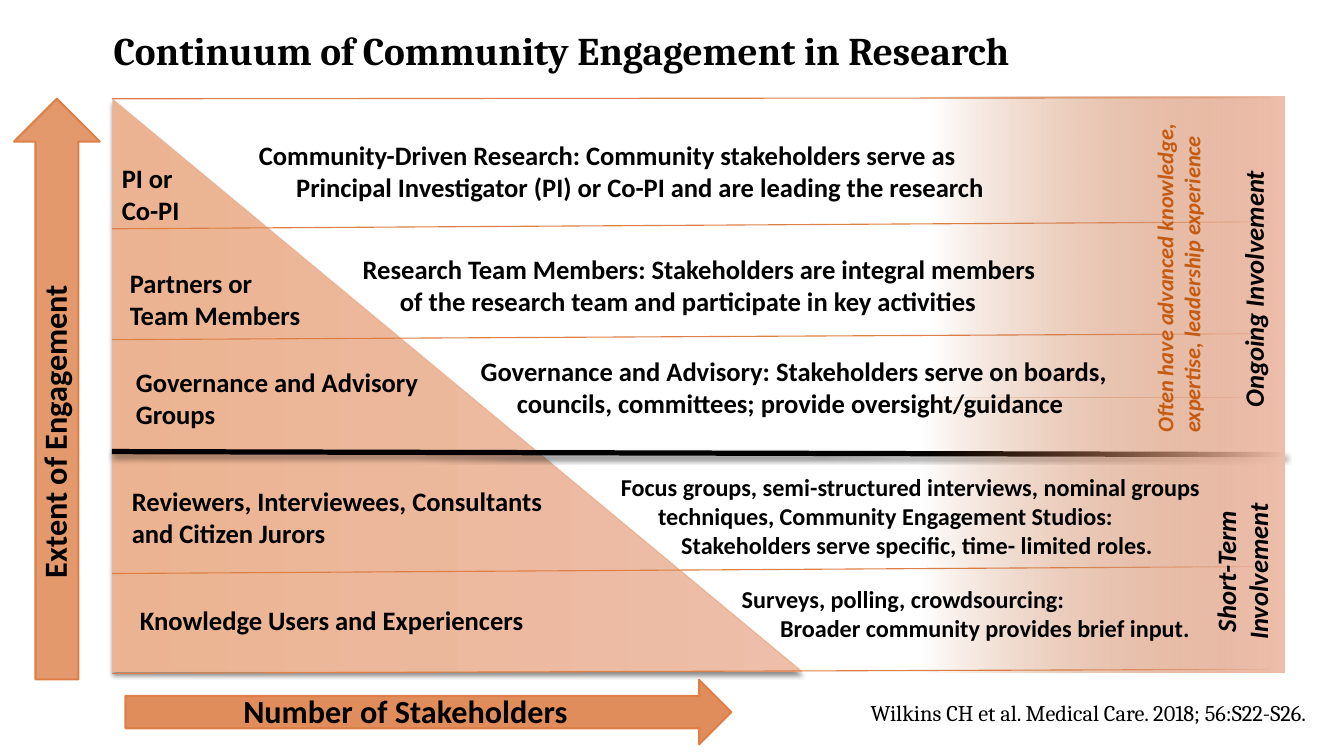
from dataclasses import dataclass

from lxml.etree import SubElement
from pptx import Presentation
from pptx.dml.color import RGBColor as RGB
from pptx.enum.shapes import MSO_CONNECTOR as CONN, MSO_SHAPE as SHAPE
from pptx.enum.text import MSO_AUTO_SIZE as AUTO, PP_ALIGN as ALIGN
from pptx.oxml.ns import qn
from pptx.util import Inches, Pt


@dataclass(frozen=True)
class Theme:
    body: str = "Calibri"
    heading: str = "Cambria"
    ink: str = "000000"
    accent: str = "DD8047"
    note: str = "C55A11"
    peach: str = "EBB391"
    blush: str = "EEBEAA"
    fade: str = "B95B22"
    title_size: float = 28
    axis_size: float = 23
    text_size: float = 19
    detail_size: float = 17.3
    small_size: float = 16
    hairline: float = 0.79
    outline: float = 1.5
    divider: float = 3.75


T = Theme()
COLS, ROWS = 133.33, 75  # square grid over the slide
LEFT, RIGHT = 11.1, 126  # ends of the row rules

# Row rules: height at the left end, height at the right end
RULES = [(9.8, 9.7), (33.7, 33.1), (22.7, 22), (56.9, 56.2), (66.8, 66.4)]

# Roles in the triangle: text, box
ROLES = [
    ("PI or\nCo-PI", (11.1, 15.6, 19.1, 7.4)),
    ("Partners or\nTeam Members", (11.9, 26, 27.1, 7.4)),
    ("Governance and Advisory Groups", (12.5, 35.8, 32.9, 7.4)),
    ("Reviewers, Interviewees, Consultants and Citizen Jurors",
     (12.1, 47.6, 47.2, 7.4)),
    ("Knowledge Users and Experiencers", (12.9, 59.4, 56.1, 4.2)),
]

# Descriptions: text, box, size, (left margin, first line) of each paragraph
HANGING = (6.3, -3.7)
DETAILS = [
    ("Community-Driven Research: Community stakeholders serve as Principal "
     "Investigator (PI) or Co-PI and are leading the research",
     (22.1, 13.3, 79.8, 7.4), T.text_size, [HANGING]),
    ("Research Team Members: Stakeholders are integral members of the "
     "research team and participate in key activities",
     (32.4, 24.6, 73.4, 7.4), T.text_size, [HANGING]),
    ("Governance and Advisory: Stakeholders serve on boards, councils, "
     "committees; provide oversight/guidance",
     (43.5, 34.7, 72.4, 7.4), T.text_size, [(6.8, -3.6)]),
    ("Focus groups, semi-structured interviews, nominal groups techniques, "
     "Community Engagement Studios:\n"
     "Stakeholders serve specific, time- limited roles.",
     (58, 46.4, 68.5, 9.8), T.detail_size, [HANGING, (8.6, 0)]),
    ("Surveys, polling, crowdsourcing:\n"
     "Broader community provides brief input.",
     (72.6, 57.5, 48.2, 6.8), T.detail_size, [(0, 0), (3.8, 0)]),
]


def grid(units):
    return Inches(units / 10)


def add_text(s, text, box, size=T.text_size, font=T.body, color=T.ink,
             bold=True, italic=False, align=ALIGN.LEFT, rotation=0, indents=()):
    tb = s.shapes.add_textbox(*map(grid, box))
    tb.rotation = rotation
    tf = tb.text_frame
    tf.word_wrap = True
    tf.auto_size = AUTO.SHAPE_TO_FIT_TEXT
    for i, line in enumerate(text.split("\n")):
        p = tf.add_paragraph() if i else tf.paragraphs[0]
        p.alignment = align
        if indents:
            margin, first = indents[i]
            pPr = p._p.get_or_add_pPr()
            pPr.set("marL", str(grid(margin)))
            pPr.set("indent", str(grid(first)))
        r = p.add_run()
        r.text = line
        f = r.font
        f.name, f.size, f.bold, f.italic = font, Pt(size), bold, italic
        f.color.rgb = RGB.from_string(color)


def add_alpha(color_el, percent):
    SubElement(color_el, qn("a:alpha")).set("val", str(percent * 1000))


def add_shadow(effects):
    shadow = SubElement(effects, qn("a:outerShdw"), blurRad=str(Pt(3)),
                        dist=str(Pt(2.4)), dir="5400000", rotWithShape="0")
    add_alpha(SubElement(shadow, qn("a:srgbClr"), val=T.ink), 45)


def add_block(s, kind, box, colors, alpha=100, line=None, width=T.outline,
              rotation=0, shadow=False):
    """Shape with one solid colour, or a left-to-right blend of two."""
    sp = s.shapes.add_shape(kind, *map(grid, box))
    sp.rotation = rotation
    sp.shadow.inherit = False
    spPr = sp._element.spPr
    if len(colors) == 1:
        sp.fill.solid()
        sp.fill.fore_color.rgb = RGB.from_string(colors[0])
    else:
        sp.fill.gradient()
        sp.fill.gradient_angle = 0
        for stop, color in zip(sp.fill.gradient_stops, colors):
            stop.color.rgb = RGB.from_string(color)
    if alpha < 100:  # applies to the first colour
        add_alpha(next(spPr.iter(qn("a:srgbClr"))), alpha)
    if line:
        sp.line.color.rgb = RGB.from_string(line)
        sp.line.width = Pt(width)
    else:
        sp.line.fill.background()
    if shadow:
        add_shadow(spPr.find(qn("a:effectLst")))


def add_rule(s, y1, y2, right=RIGHT, color=T.accent, width=T.hairline,
             shadow=False):
    c = s.shapes.add_connector(CONN.STRAIGHT, *map(grid, (LEFT, y1, right, y2)))
    c.line.color.rgb = RGB.from_string(color)
    c.line.width = Pt(width)
    effects = SubElement(c._element.spPr, qn("a:effectLst"))
    if shadow:
        add_shadow(effects)


def main():
    prs = Presentation()
    prs.slide_width, prs.slide_height = grid(COLS), grid(ROWS)
    s = prs.slides.add_slide(prs.slide_layouts[6])

    # Horizontal axis arrow, triangle and row rules
    add_block(s, SHAPE.UP_ARROW, (39.3, 40.6, 6.4, 60.1), [T.accent],
              alpha=89, line=T.accent, rotation=90)
    add_block(s, SHAPE.RIGHT_TRIANGLE, (11.2, 9.9, 68.3, 56.7),
              [T.peach, T.blush], line=T.peach, width=T.hairline, shadow=True)
    add_rule(s, 44.8, 45.1, right=127.4, color=T.ink, width=T.divider,
             shadow=True)
    for y1, y2 in RULES:
        add_rule(s, y1, y2)

    # Roles, then the fading bands on the right
    for text, box in ROLES:
        add_text(s, text, box)
    for band in ((92.3, 9.6, 35.1, 29.8), (91.2, 39.4, 36.2, 27.3)):
        add_block(s, SHAPE.RECTANGLE, band, [T.fade, T.blush], alpha=0)

    # Vertical notes on involvement
    add_text(s, "Often have advanced knowledge, expertise, leadership experience",
             (99.9, 23.7, 34, 6.4), T.small_size, color=T.note, italic=True,
             rotation=270)
    for text, box in (("Short-Term Involvement", (113.3, 53, 19.8, 7.4)),
                      ("Ongoing Involvement", (111.3, 26.6, 26.1, 4.2))):
        add_text(s, text, box, italic=True, align=ALIGN.CENTER, rotation=270)

    # Title and axes
    add_text(s, "Continuum of Community Engagement in Research",
             (10.3, 2.1, 117, 5.7), T.title_size, T.heading)
    add_text(s, "Number of Stakeholders", (8.5, 68.1, 63.5, 4.9), T.axis_size,
             align=ALIGN.CENTER)
    add_block(s, SHAPE.UP_ARROW, (1.4, 9.8, 8.5, 57.6), [T.accent],
              alpha=80, line=T.accent)
    add_text(s, "Extent of Engagement", (-13.9, 36.6, 38.6, 4.9), T.axis_size,
             rotation=270)

    # Descriptions and citation
    for text, box, size, indents in DETAILS:
        add_text(s, text, box, size, indents=indents)
    add_text(s, "Wilkins CH et al. Medical Care. 2018; 56:S22-S26.",
             (74.3, 68.9, 56.3, 3.7), T.small_size, T.heading, bold=False,
             align=ALIGN.RIGHT)

    prs.save("out.pptx")


if __name__ == "__main__":
    main()
